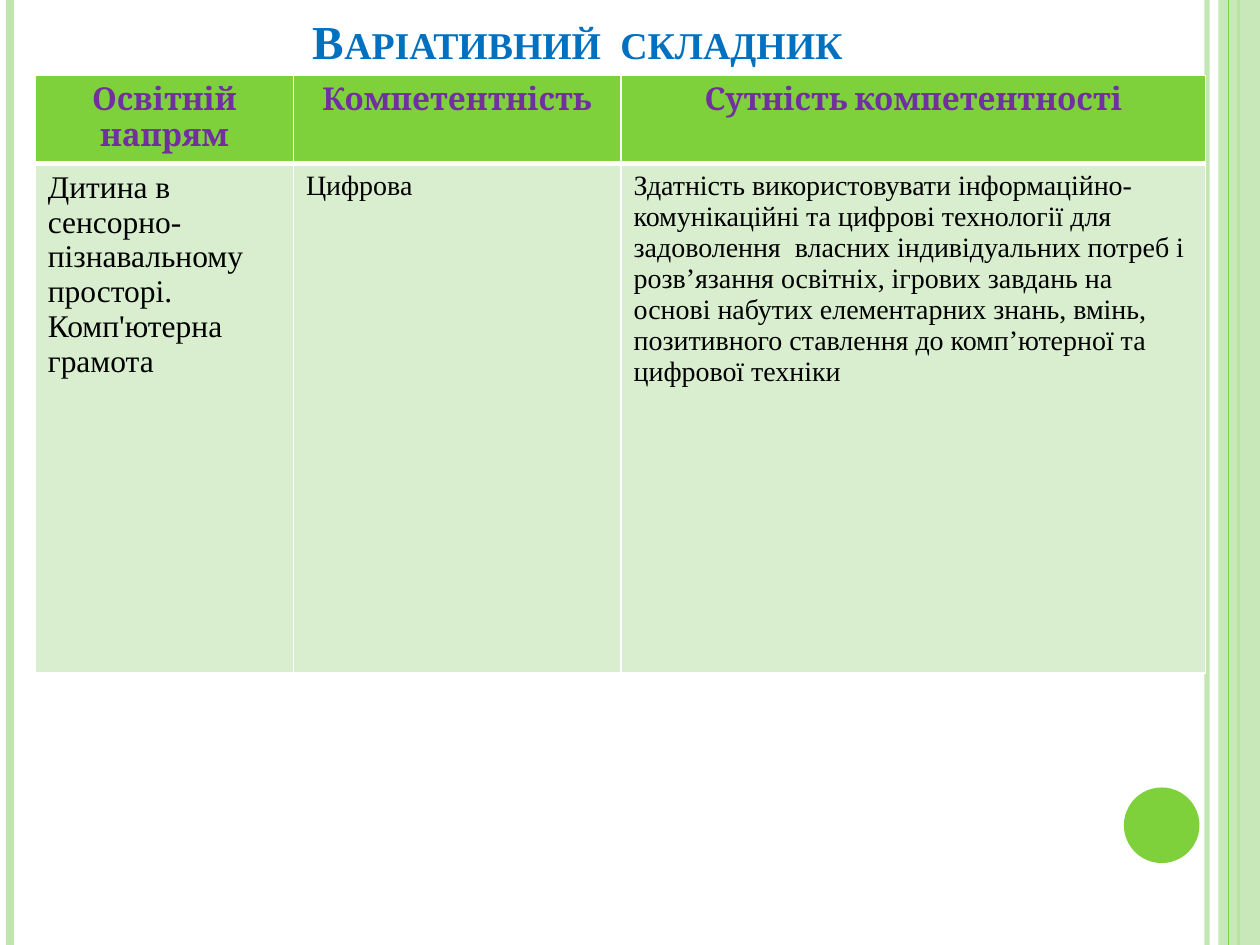
import pptx
import pptx.util
import pptx.dml.color
import pptx.enum.shapes
import pptx.enum.text
import pptx.oxml.ns
import lxml.etree

Inches = pptx.util.Inches
Pt = pptx.util.Pt
CENTER = pptx.enum.text.PP_ALIGN.CENTER
LEFT = pptx.enum.text.PP_ALIGN.LEFT

GREEN = "7FD13B"
PALE_GREEN = "C0E5AF"
BODY_GREEN = "D8EECE"
WHITE = "FFFFFF"

HEADINGS = ["Освітній напрям", "Компетентність", "Сутність компетентності"]
DETAILS = [
    ("Дитина в сенсорно-пізнавальному просторі.\nКомп'ютерна грамота", 18),
    ("Цифрова", 16),
    ("Здатність використовувати інформаційно-комунікаційні та цифрові технології "
     "для задоволення  власних індивідуальних потреб і розв’язання освітніх, "
     "ігрових завдань на основі набутих елементарних знань, вмінь, позитивного "
     "ставлення до комп’ютерної та цифрової техніки", 16),
]


def color(value):
    return pptx.dml.color.RGBColor.from_string(value)


def sub(parent, tag, **attributes):
    return lxml.etree.SubElement(parent, pptx.oxml.ns.qn(tag), **attributes)


def write(frame, text, size, font="Times New Roman", fill="000000",
          bold=False, align=LEFT, small_caps=False):
    frame.word_wrap = True
    for index, line in enumerate(text.split("\n")):
        paragraph = frame.paragraphs[0] if index == 0 else frame.add_paragraph()
        paragraph.alignment = align
        run = paragraph.add_run()
        run.text = line
        run.font.size = Pt(size)
        run.font.name = font
        run.font.bold = bold
        run.font.color.rgb = color(fill)
        if small_caps:
            run.font._element.set("cap", "small")


def set_opacity(properties, percent):
    solid = properties.find(".//" + pptx.oxml.ns.qn("a:srgbClr"))
    sub(solid, "a:alpha", val=str(percent * 1000))


def add_rule(slide, x, top, height, stroke, width, opacity=100):
    rule = slide.shapes.add_connector(
        pptx.enum.shapes.MSO_CONNECTOR.STRAIGHT,
        Inches(x), Inches(top), Inches(x), Inches(top + height))
    rule.line.color.rgb = color(stroke)
    rule.line.width = Pt(width)
    properties = rule._element.spPr
    if opacity < 100:
        set_opacity(properties, opacity)
    sub(properties, "a:effectLst")


def add_plain_shape(slide, kind, left, top, width, height, fill, opacity=100):
    shape = slide.shapes.add_shape(
        kind, Inches(left), Inches(top), Inches(width), Inches(height))
    shape.shadow.inherit = False
    shape.fill.solid()
    shape.fill.fore_color.rgb = color(fill)
    shape.line.fill.background()
    if opacity < 100:
        set_opacity(shape._element.spPr, opacity)


def add_decoration(slide, left, top, width, height):
    right = left + width
    shapes = pptx.enum.shapes.MSO_SHAPE
    add_rule(slide, right - 0.42, top, height, PALE_GREEN, 3, opacity=93)
    add_rule(slide, left + 0.08, top, height, PALE_GREEN, 4.5)
    add_rule(slide, right - 0.17, top, height, GREEN, 1.5)
    add_plain_shape(slide, shapes.RECTANGLE, right - 0.33, top, 0.33, height,
                    PALE_GREEN, opacity=87)
    add_rule(slide, right - 0.25, top, height, GREEN, 0.75)
    add_plain_shape(slide, shapes.OVAL, right - 1.08, top + height - 1.25,
                    0.6, 0.6, GREEN)


def add_title(slide, left, top, width, height):
    title = slide.shapes.title
    title.left, title.top = Inches(left), Inches(top)
    title.width, title.height = Inches(width), Inches(height)
    frame = title.text_frame
    frame.auto_size = pptx.enum.text.MSO_AUTO_SIZE.NONE
    frame.vertical_anchor = pptx.enum.text.MSO_ANCHOR.BOTTOM
    write(frame, "Варіативний  складник", 27, fill="0070C0", bold=True,
          align=CENTER, small_caps=True)


def format_cell(cell, fill, top_border, bottom_border):
    properties = cell._tc.get_or_add_tcPr()
    borders = {"a:lnL": 1, "a:lnR": 1, "a:lnT": top_border, "a:lnB": bottom_border}
    for side, width in borders.items():
        line = sub(properties, side, w=str(Pt(width)))
        sub(sub(line, "a:solidFill"), "a:srgbClr", val=WHITE)
    cell.fill.solid()
    cell.fill.fore_color.rgb = color(fill)


def add_competence_table(slide, left, top, width, height):
    header_height = 0.7
    table = slide.shapes.add_table(
        2, len(HEADINGS), Inches(left), Inches(top), Inches(width), Inches(height)).table
    for column, column_width in zip(table.columns, (2.05, 2.6, width - 4.65)):
        column.width = Inches(column_width)
    table.rows[0].height = Inches(header_height)
    table.rows[1].height = Inches(height - header_height)
    for index, (heading, (detail, size)) in enumerate(zip(HEADINGS, DETAILS)):
        header, body = table.cell(0, index), table.cell(1, index)
        format_cell(header, GREEN, 1, 3)
        format_cell(body, BODY_GREEN, 3, 1)
        write(header.text_frame, heading, 18, font="Cambria", fill="7030A0",
              bold=True, align=CENTER)
        write(body.text_frame, detail, size)


def main():
    deck = pptx.Presentation()
    deck.slide_width, deck.slide_height = Inches(10), Inches(7.5)
    slide = deck.slides.add_slide(deck.slide_layouts.get_by_name("Title Only"))
    slide.background.fill.solid()
    slide.background.fill.fore_color.rgb = color(WHITE)
    add_decoration(slide, 0, 0, 10, 7.5)
    add_title(slide, 0.5, 0.13, 8.17, 0.47)
    add_competence_table(slide, 0.28, 0.6, 9.29, 4.74)
    deck.save("out.pptx")


if __name__ == "__main__":
    main()
